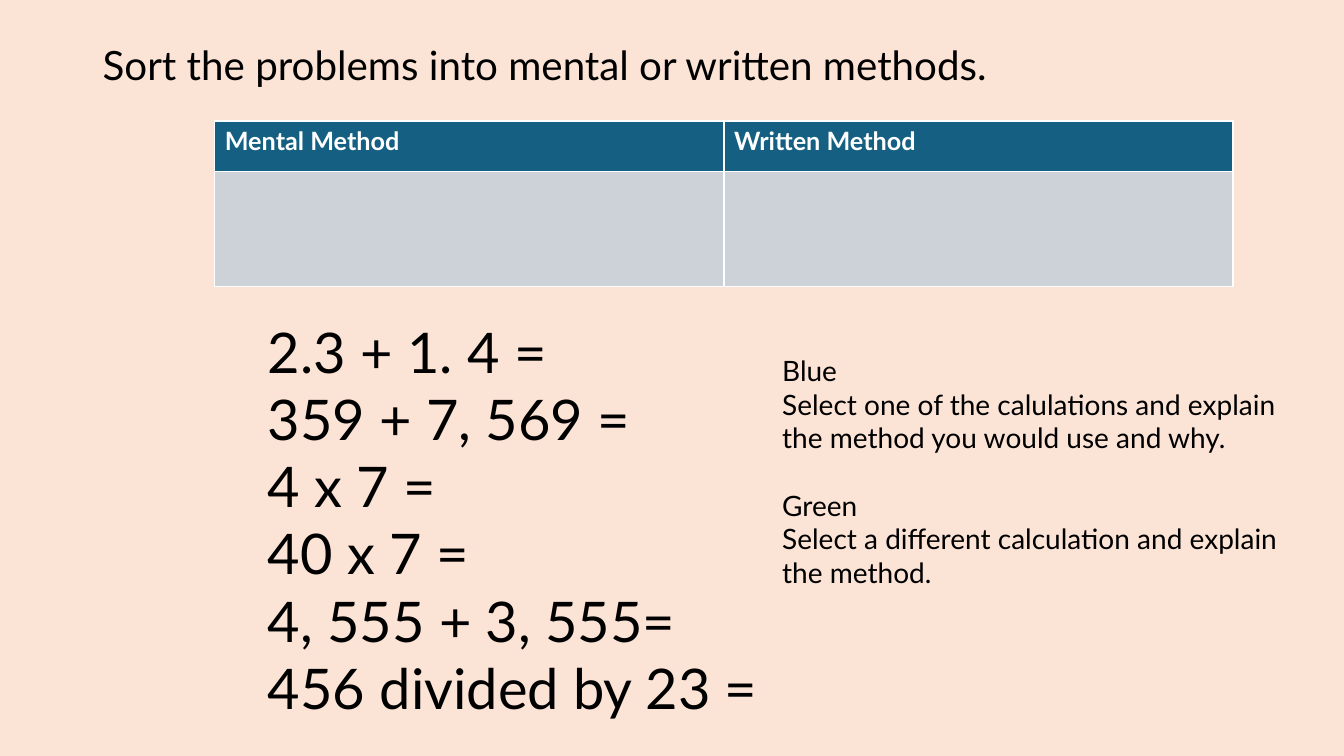
from pptx import Presentation
from pptx.dml.color import RGBColor
from pptx.enum.text import MSO_ANCHOR
from pptx.util import Inches, Pt

PEACH = RGBColor(0xFB, 0xE3, 0xD6)
TEAL = RGBColor(0x15, 0x60, 0x82)
GREY = RGBColor(0xCC, 0xD2, 0xD8)
BLACK = RGBColor(0, 0, 0)
WHITE = RGBColor(0xFF, 0xFF, 0xFF)
FONT = "Lato"

PROBLEMS = [
    "2.3 + 1. 4 =",
    "359 + 7, 569 =",
    "4 x 7 =",
    "40 x 7 =",
    "4, 555 + 3, 555=",
    "456 divided by 23 =",
]
CHALLENGES = [
    ("Blue", "Select one of the calulations and explain the method you would use and why."),
    ("Green", "Select a different calculation and explain the method."),
]


def add_run(paragraph, text, size, color=BLACK, bold=False):
    run = paragraph.add_run()
    run.text = text
    run.font.name = FONT
    run.font.size = Pt(size)
    run.font.color.rgb = color
    run.font.bold = bold


def add_lines(slide, box, lines, size):
    """Add a wrapping text box with one paragraph per line; return its frame."""
    frame = slide.shapes.add_textbox(*map(Inches, box)).text_frame
    frame.word_wrap = True
    for index, line in enumerate(lines):
        paragraph = frame.add_paragraph() if index else frame.paragraphs[0]
        add_run(paragraph, line, size)
    return frame


def add_heading(slide, box):
    frame = add_lines(slide, box, ["Sort the problems into mental or written methods."], 28.8)
    frame.vertical_anchor = MSO_ANCHOR.MIDDLE
    frame.paragraphs[0].line_spacing = 0.9


def add_sorting_table(slide, box, header_share=0.305):
    headings = ["Mental Method", "Written Method"]
    left, top, width, height = map(Inches, box)
    table = slide.shapes.add_table(2, len(headings), left, top, width, height).table
    table.rows[0].height = int(height * header_share)
    table.rows[1].height = height - table.rows[0].height
    for column, heading in enumerate(headings):
        for row, color in enumerate((TEAL, GREY)):
            fill = table.cell(row, column).fill
            fill.solid()
            fill.fore_color.rgb = color
        add_run(table.cell(0, column).text_frame.paragraphs[0], heading, 18, WHITE, True)


def add_challenges(slide, box, size=20):
    lines = [line for challenge in CHALLENGES for line in challenge]
    frame = add_lines(slide, box, lines, size)
    for group_start in frame.paragraphs[2::2]:
        group_start.space_before = Pt(size * 1.2)


def main():
    deck = Presentation()
    deck.slide_width, deck.slide_height = Inches(13.33), Inches(7.5)
    slide = deck.slides.add_slide(deck.slide_layouts[6])
    slide.background.fill.solid()
    slide.background.fill.fore_color.rgb = PEACH

    add_heading(slide, (0.92, 0.4, 11.5, 0.54))
    add_sorting_table(slide, (2.13, 1.2, 10.1, 1.64))
    add_lines(slide, (2.56, 3.1, 11.2, 4.14), PROBLEMS, 40)
    add_challenges(slide, (7.66, 3.46, 5.36, 2.46))
    deck.save("out.pptx")


if __name__ == "__main__":
    main()
